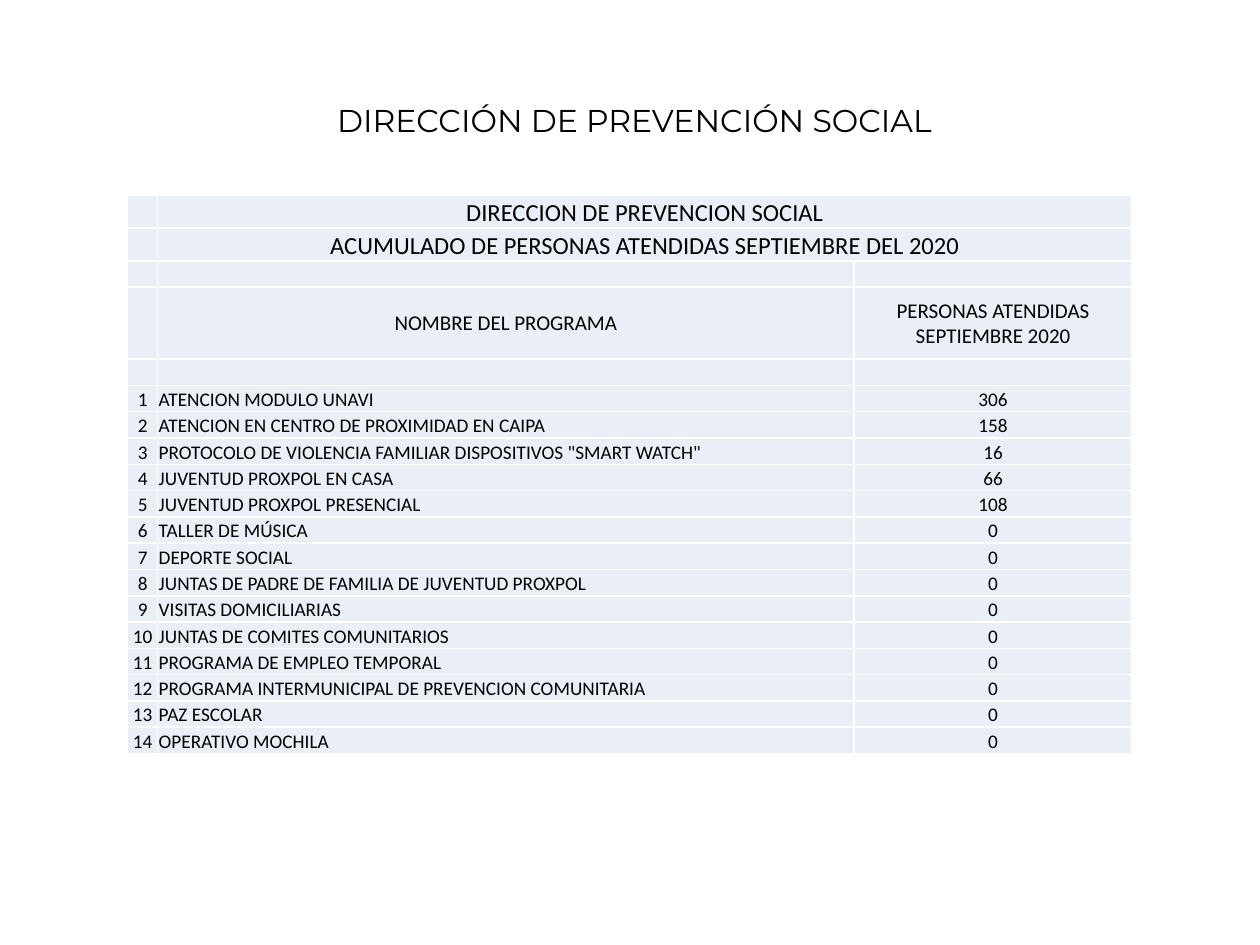
from dataclasses import dataclass

from lxml.etree import SubElement
from pptx import Presentation
from pptx.dml.color import RGBColor
from pptx.enum.text import MSO_ANCHOR, PP_ALIGN
from pptx.oxml.ns import qn
from pptx.util import Cm, Pt


@dataclass(frozen=True)
class Theme:
    """Colours, fonts and type sizes of the slide."""
    ink: str = "000000"
    cell: str = "EAEFF7"
    border: str = "FFFFFF"
    title_font: str = "Montserrat"
    body_font: str = "Calibri"
    title: int = 18
    banner: int = 14
    header: int = 12
    body: int = 11


TITLE = "DIRECCIÓN DE PREVENCIÓN SOCIAL"
BANNERS = [
    "DIRECCION DE PREVENCION SOCIAL",
    "ACUMULADO DE PERSONAS ATENDIDAS SEPTIEMBRE DEL 2020",
]
HEADERS = ["", "NOMBRE DEL PROGRAMA", "PERSONAS ATENDIDAS SEPTIEMBRE 2020"]
PROGRAMS = [
    ("ATENCION MODULO UNAVI", 306),
    ("ATENCION EN CENTRO DE PROXIMIDAD EN CAIPA", 158),
    ('PROTOCOLO DE VIOLENCIA FAMILIAR DISPOSITIVOS "SMART WATCH"', 16),
    ("JUVENTUD PROXPOL EN CASA", 66),
    ("JUVENTUD PROXPOL PRESENCIAL", 108),
    ("TALLER DE MÚSICA", 0),
    ("DEPORTE SOCIAL", 0),
    ("JUNTAS DE PADRE DE FAMILIA DE JUVENTUD PROXPOL", 0),
    ("VISITAS DOMICILIARIAS", 0),
    ("JUNTAS DE COMITES COMUNITARIOS", 0),
    ("PROGRAMA DE EMPLEO TEMPORAL", 0),
    ("PROGRAMA INTERMUNICIPAL DE PREVENCION COMUNITARIA", 0),
    ("PAZ ESCOLAR", 0),
    ("OPERATIVO MOCHILA", 0),
]
COLUMN_WIDTHS = [0.61, 14.04, 5.6]
BANNER_HEIGHT, HEADER_HEIGHT, ROW_HEIGHT = 0.66, 1.45, 0.53


class SlideBuilder:
    """Draws styled elements on the current slide."""

    def __init__(self, prs, theme):
        self.theme = theme
        self.s = prs.slides.add_slide(prs.slide_layouts[5])

    def add_run(self, p, text, size, font):
        """Add one run in the theme's ink."""
        r = p.add_run()
        r.text = text
        r.font.size = Pt(size)
        r.font.name = font
        r.font.color.rgb = RGBColor.from_string(self.theme.ink)

    def title(self, text, left, top, width, height):
        """Place and fill the title placeholder."""
        sp = self.s.shapes.title
        sp.left, sp.top, sp.width, sp.height = map(Cm, (left, top, width, height))
        tf = sp.text_frame
        tf.word_wrap = True
        tf.vertical_anchor = MSO_ANCHOR.MIDDLE
        p = tf.paragraphs[0]
        p.alignment = PP_ALIGN.CENTER
        self.add_run(p, text, self.theme.title, self.theme.title_font)

    def borders(self, cell):
        """Draw a thin line on all four sides of a cell."""
        tc_pr = cell._tc.get_or_add_tcPr()
        for side in ("lnL", "lnR", "lnT", "lnB"):
            ln = SubElement(tc_pr, qn(f"a:{side}"), w=str(Pt(1)))
            fill = SubElement(ln, qn("a:solidFill"))
            SubElement(fill, qn("a:srgbClr"), val=self.theme.border)

    def cell(self, cell, text, size, align, anchor):
        """Style and fill one table cell."""
        self.borders(cell)
        cell.fill.solid()
        cell.fill.fore_color.rgb = RGBColor.from_string(self.theme.cell)
        cell.margin_left = cell.margin_right = cell.margin_top = Cm(0.02)
        cell.margin_bottom = 0
        cell.vertical_anchor = anchor
        p = cell.text_frame.paragraphs[0]
        p.alignment = align
        if text:
            self.add_run(p, text, size, self.theme.body_font)
        else:
            SubElement(p._p, qn("a:endParaRPr"), sz=str(size * 100))

    def table(self, rows, left, top, widths):
        """Add a table from rows of (height, size, anchor, texts)."""
        height = sum(row[0] for row in rows)
        frame = self.s.shapes.add_table(
            len(rows), len(widths), Cm(left), Cm(top), Cm(sum(widths)), Cm(height))
        table = frame.table
        table.first_row = table.horz_banding = False
        for column, width in zip(table.columns, widths):
            column.width = Cm(width)
        for i, (height, size, anchor, texts) in enumerate(rows):
            table.rows[i].height = Cm(height)
            for j, text in enumerate(texts):
                is_name = j == 1 and size == self.theme.body
                align = PP_ALIGN.LEFT if is_name else PP_ALIGN.CENTER
                self.cell(table.cell(i, j), text, size, align, anchor)
        return table


def main():
    """Build and save the slide."""
    prs = Presentation()
    prs.slide_width, prs.slide_height = Cm(25.4), Cm(19.05)
    theme = Theme()
    slide = SlideBuilder(prs, theme)
    slide.title(TITLE, 4.09, 1.9, 17.4, 1.02)

    bottom, middle = MSO_ANCHOR.BOTTOM, MSO_ANCHOR.MIDDLE
    spacer = (ROW_HEIGHT, theme.body, bottom, ["", "", ""])
    rows = [(BANNER_HEIGHT, theme.banner, bottom, ["", text, ""]) for text in BANNERS]
    rows += [spacer, (HEADER_HEIGHT, theme.header, middle, HEADERS), spacer]
    rows += [(ROW_HEIGHT, theme.body, bottom, [str(n), name, str(count)])
             for n, (name, count) in enumerate(PROGRAMS, 1)]
    table = slide.table(rows, 2.57, 3.94, COLUMN_WIDTHS)
    for i in range(len(BANNERS)):
        table.cell(i, 1).merge(table.cell(i, 2))
    prs.save("out.pptx")


if __name__ == "__main__":
    main()
